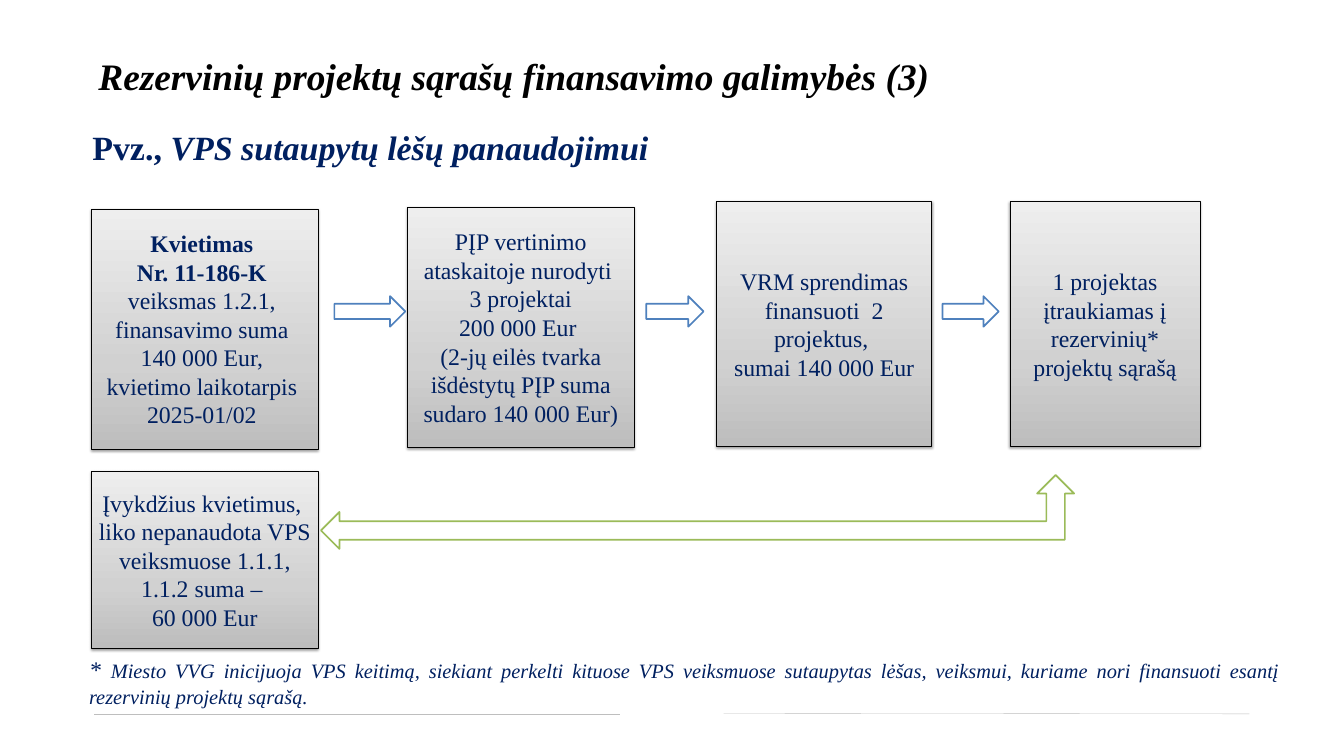
from dataclasses import dataclass
from typing import NamedTuple

from pptx import Presentation
from pptx.dml.color import RGBColor
from pptx.enum.shapes import MSO_CONNECTOR as Connector, MSO_SHAPE as Preset
from pptx.enum.text import MSO_ANCHOR as Anchor, PP_ALIGN as Align
from pptx.oxml import parse_xml
from pptx.oxml.ns import nsdecls
from pptx.util import Inches, Pt


@dataclass(frozen=True)
class Theme:
    font: str = "Times New Roman"
    ink: str = "000000"
    navy: str = "002060"
    white: str = "FFFFFF"
    step_arrow: str = "4F81BD"
    return_arrow: str = "9BBB59"
    rule: str = "BEBEBE"
    gradient: tuple[tuple[int, str], ...] = ((0, "BDBDBD"), (35, "D1D1D1"), (100, "EEEEEE"))
    title_size: int = 44
    subtitle_size: int = 40
    body_size: int = 28
    note_size: int = 24


class Area(NamedTuple):
    """Left, top, width and height in percent of the slide."""
    left: float
    top: float
    width: float
    height: float


class Span(NamedTuple):
    text: str
    size: int
    color: str
    bold: bool = False
    italic: bool = False


class Step(NamedTuple):
    area: Area
    lines: tuple[str, ...]
    bold_lines: int = 0


class Arrow(NamedTuple):
    preset: Preset
    area: Area
    color: str


class Label(NamedTuple):
    area: Area
    spans: tuple[Span, ...]
    align: Align = Align.LEFT
    inset: tuple[float, float] = (0, 0)


class Rule(NamedTuple):
    start: tuple[float, float]
    end: tuple[float, float]


THEME = Theme()
WIDTH, HEIGHT = Pt(1583), Pt(891)
ARROW_TOP, ARROW_HEIGHT = 39.18, 4.04

STEPS = (
    Step(Area(6.82, 27.63, 16.83, 31.74),
         ("Kvietimas ", "Nr. 11-186-K ", "veiksmas 1.2.1,  finansavimo suma ",
          "140 000 Eur, ", "kvietimo laikotarpis ", "2025-01/02 "), bold_lines=2),
    Step(Area(30.33, 27.38, 16.83, 31.74),
         ("PĮP vertinimo ataskaitoje nurodyti ", "3 projektai", "200 000 Eur ",
          "(2-jų eilės tvarka išdėstytų PĮP suma sudaro 140 000 Eur)")),
    Step(Area(53.31, 26.66, 16.02, 32.4),
         ("VRM sprendimas finansuoti  2 projektus, ", "sumai 140 000 Eur")),
    Step(Area(75.14, 26.66, 14.15, 32.4),
         ("1 projektas įtraukiamas į rezervinių* projektų sąrašą",)),
    Step(Area(6.82, 62.36, 16.83, 23.34),
         ("Įvykdžius kvietimus,  liko nepanaudota VPS veiksmuose 1.1.1, 1.1.2 suma – ",
          "60 000 Eur")),
)

ARROWS = (
    *(Arrow(Preset.RIGHT_ARROW, Area(left, ARROW_TOP, width, ARROW_HEIGHT), THEME.step_arrow)
      for left, width in ((24.88, 5.28), (48.08, 4.27), (70.13, 4.18))),
    Arrow(Preset.LEFT_UP_ARROW, Area(23.88, 62.84, 56.04, 9.77), THEME.return_arrow),
)

LABELS = (
    Label(Area(7.32, 7.09, 89.45, 5.98),
          (Span("Rezervinių projektų sąrašų finansavimo galimybės (3)",
                THEME.title_size, THEME.ink, True, True),)),
    Label(Area(6.87, 16.72, 88.09, 5.98),
          (Span("Pvz., ", THEME.subtitle_size, THEME.navy, True),
           Span("VPS sutaupytų lėšų panaudojimui", THEME.subtitle_size, THEME.navy, True, True))),
    Label(Area(6.18, 86.27, 89.46, 7.92),
          (Span("* ", THEME.body_size, THEME.navy, italic=True),
           Span("Miesto VVG inicijuoja VPS keitimą, siekiant perkelti kituose VPS veiksmuose "
                "sutaupytas lėšas, veiksmui, kuriame nori finansuoti esantį rezervinių projektų "
                "sąrašą. ", THEME.note_size, THEME.navy, italic=True)),
          Align.JUSTIFY, (0.1, 0.05)),
)

RULES = (Rule((7, 94.51), (46.12, 94.51)), Rule((53.85, 94.35), (92.96, 94.43)))


def across(share: float) -> int:
    return round(WIDTH * share / 100)


def down(share: float) -> int:
    return round(HEIGHT * share / 100)


def place(area: Area) -> tuple[int, int, int, int]:
    return across(area.left), down(area.top), across(area.width), down(area.height)


def set_all(target, values: dict) -> None:
    for name, value in values.items():
        setattr(target, name, value)


def set_line(line, color: str, width: float) -> None:
    line.color.rgb = RGBColor.from_string(color)
    line.width = Pt(width)


def add_span(para, span: Span) -> None:
    run = para.add_run()
    run.text = span.text
    set_all(run.font, {"name": THEME.font, "size": Pt(span.size),
                       "bold": span.bold, "italic": span.italic})
    run.font.color.rgb = RGBColor.from_string(span.color)


def gradient_fill():
    stops = "".join(f'<a:gs pos="{share * 1000}"><a:srgbClr val="{color}"/></a:gs>'
                    for share, color in THEME.gradient)
    return parse_xml(f'<a:gradFill {nsdecls("a")} rotWithShape="1"><a:gsLst>{stops}</a:gsLst>'
                     '<a:lin ang="16200000" scaled="0"/></a:gradFill>')


def soft_shadow():
    return parse_xml(f'<a:effectLst {nsdecls("a")}>'
                     f'<a:outerShdw blurRad="{Pt(3.1)}" dist="{Pt(1.6)}" dir="5400000" '
                     f'rotWithShape="0"><a:srgbClr val="{THEME.ink}"><a:alpha val="38000"/>'
                     '</a:srgbClr></a:outerShdw></a:effectLst>')


def draw_step(page, step: Step) -> None:
    box = page.shapes.add_shape(Preset.RECTANGLE, *place(step.area))
    set_line(box.line, THEME.ink, 0.75)
    properties = box.element.spPr
    properties.find("{*}prstGeom").addnext(gradient_fill())
    properties.append(soft_shadow())
    frame = box.text_frame
    set_all(frame, {"word_wrap": True, "vertical_anchor": Anchor.MIDDLE})
    for index, line in enumerate(step.lines):
        para = frame.add_paragraph() if index else frame.paragraphs[0]
        para.alignment = Align.CENTER
        add_span(para, Span(line, THEME.body_size, THEME.navy, index < step.bold_lines))


def draw_arrow(page, arrow: Arrow) -> None:
    shape = page.shapes.add_shape(arrow.preset, *place(arrow.area))
    shape.shadow.inherit = False
    shape.fill.solid()
    shape.fill.fore_color.rgb = RGBColor.from_string(THEME.white)
    set_line(shape.line, arrow.color, 2)


def draw_label(page, label: Label) -> None:
    frame = page.shapes.add_textbox(*place(label.area)).text_frame
    side, end = map(Inches, label.inset)
    set_all(frame, {"word_wrap": True, "margin_left": side, "margin_right": side,
                    "margin_top": end, "margin_bottom": end})
    para = frame.paragraphs[0]
    para.alignment = label.align
    for span in label.spans:
        add_span(para, span)


def draw_rule(page, rule: Rule) -> None:
    (left, top), (right, bottom) = rule
    line = page.shapes.add_connector(Connector.STRAIGHT, across(left), down(top),
                                     across(right), down(bottom))
    set_line(line.line, THEME.rule, 0.4)
    line.element.spPr.append(parse_xml(f'<a:effectLst {nsdecls("a")}/>'))


def main() -> None:
    deck = Presentation()
    deck.slide_width, deck.slide_height = WIDTH, HEIGHT
    page = deck.slides.add_slide(deck.slide_layouts[6])
    # Footer rules, headings and footnote, process boxes, arrows
    for draw, parts in ((draw_rule, RULES), (draw_label, LABELS),
                        (draw_step, STEPS), (draw_arrow, ARROWS)):
        for part in parts:
            draw(page, part)
    deck.save("out.pptx")


if __name__ == "__main__":
    main()
